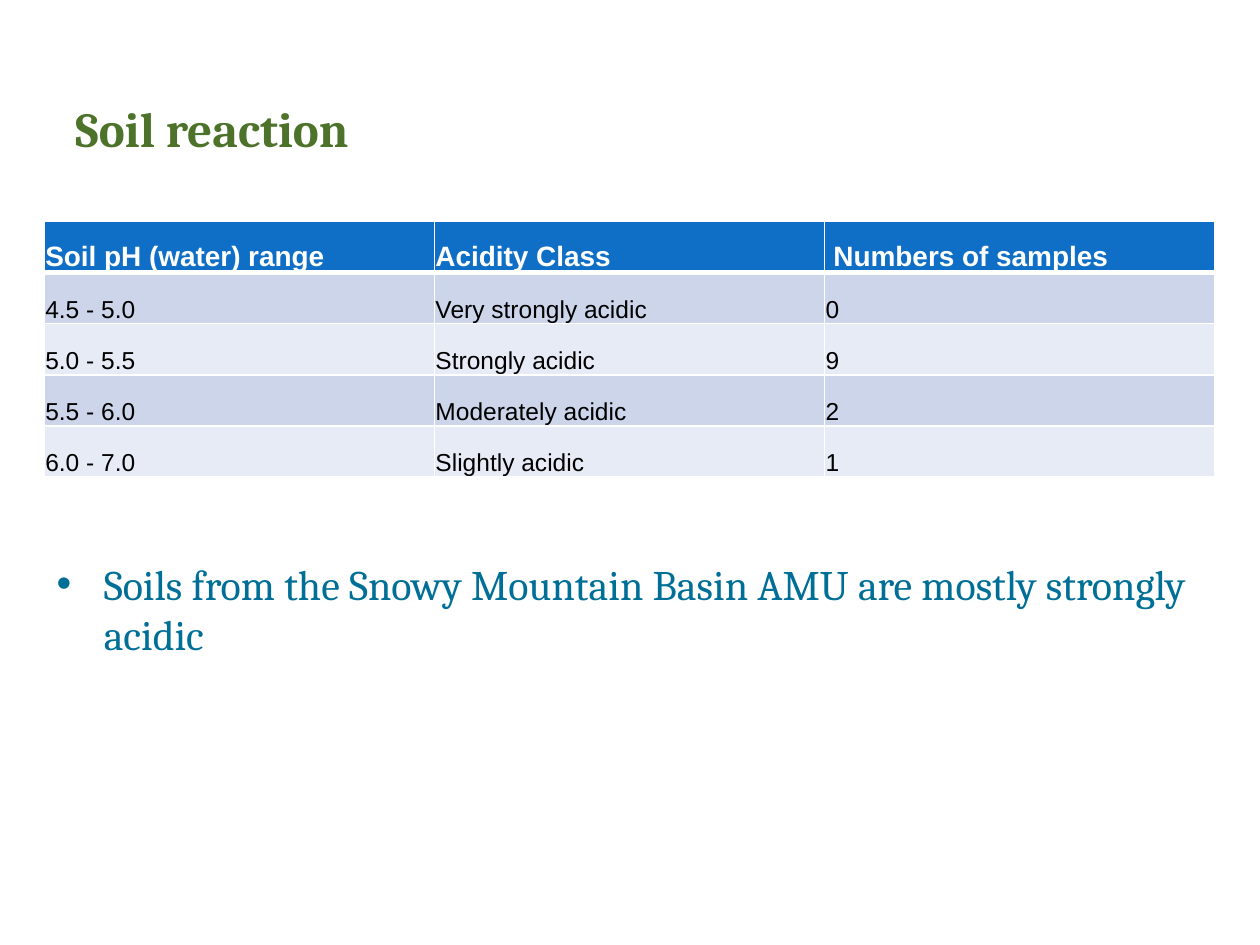
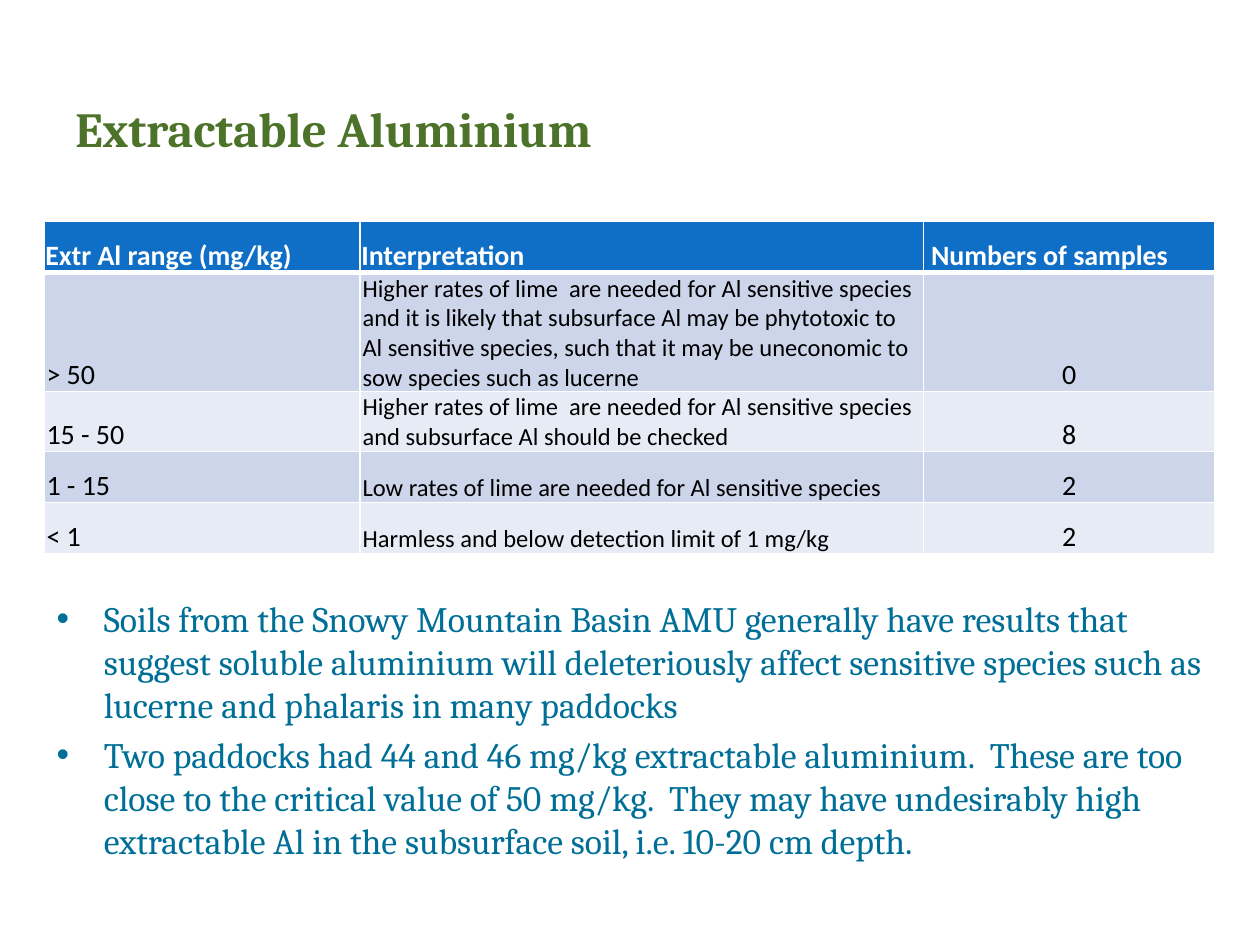
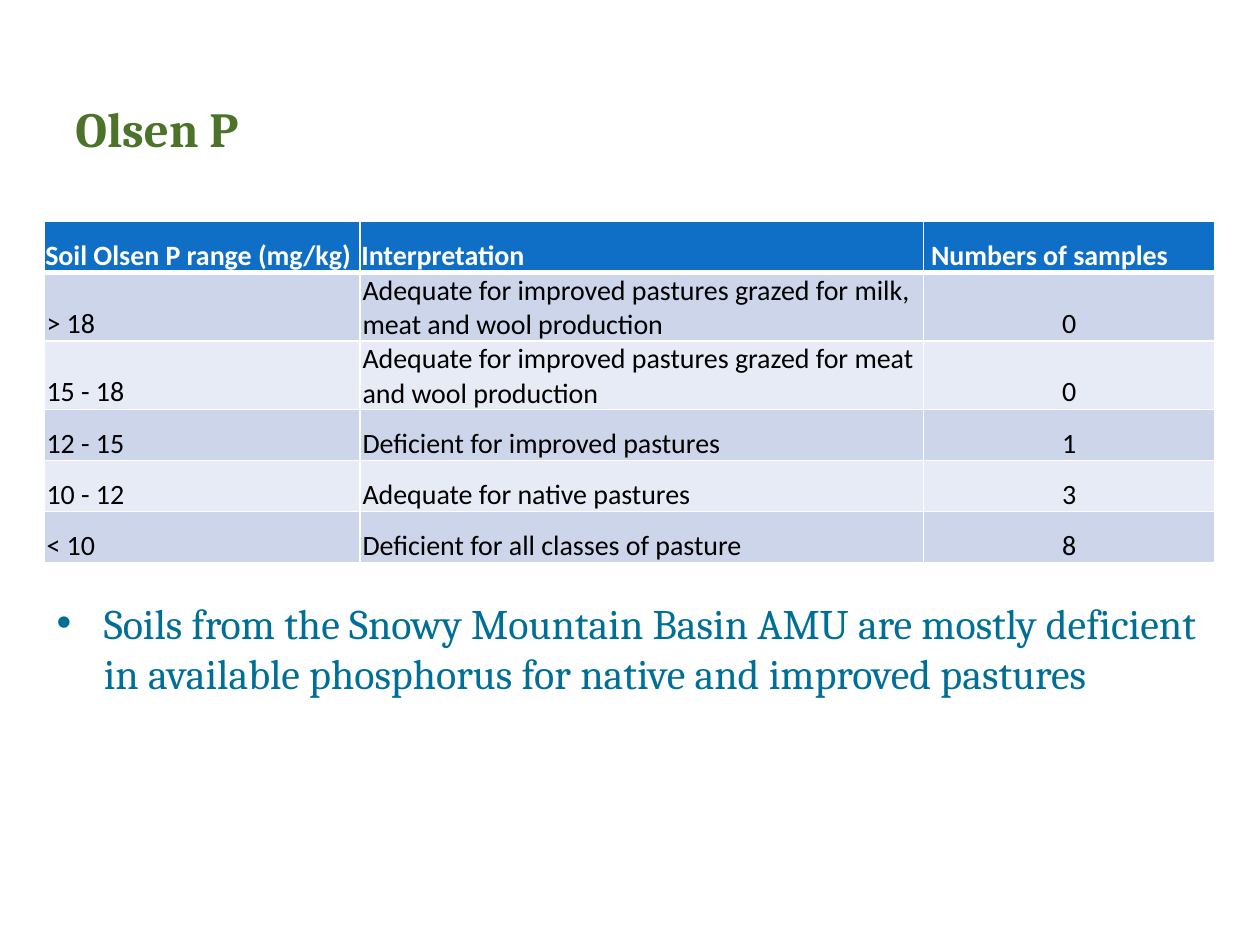
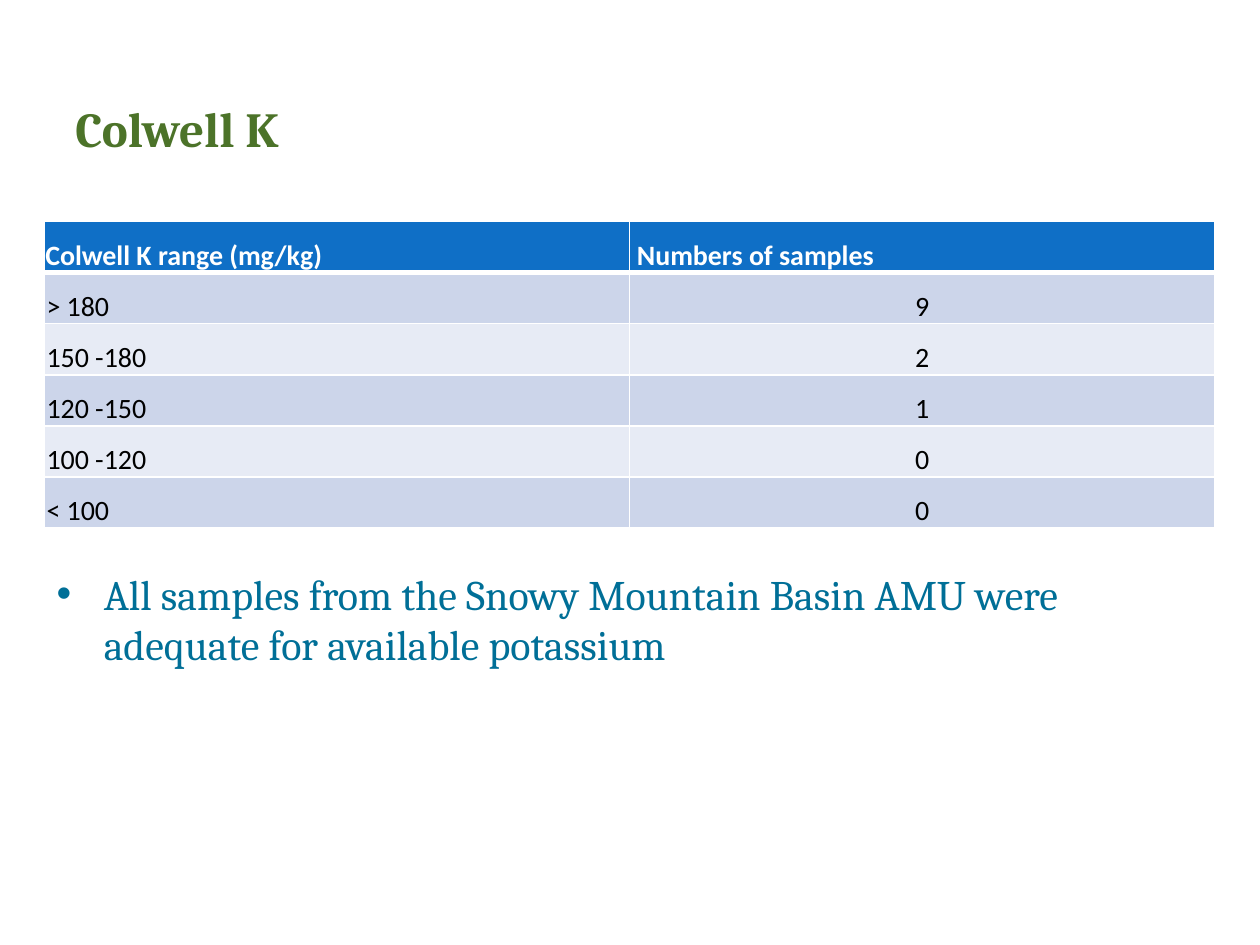
from dataclasses import dataclass

from lxml.etree import SubElement
from pptx import Presentation
from pptx.dml.color import RGBColor as Color
from pptx.enum.text import MSO_ANCHOR as Anchor, PP_ALIGN as Align
from pptx.oxml.ns import qn
from pptx.util import Pt


@dataclass(frozen=True)
class Theme:
    title_color: str = "4C7329"
    body_color: str = "006F97"
    header_fill: str = "0F6FC6"
    band_fills: tuple = ("E7EBF5", "CCD5EA")
    white: str = "FFFFFF"
    black: str = "000000"
    serif: str = "Cambria"
    title_size: float = 28
    header_size: float = 16
    left: float = 25.2
    table_top: float = 126.6
    row_height: float = 29.2
    bullet_indent: float = 27
    bullet_gap: float = 4
    thin: float = 1
    thick: float = 3


theme = Theme()

SAMPLES = " Numbers of samples"

pages = [
    {
        "title": "Soil reaction",
        "font": "Arial",
        "columns": [223, 223, 223],
        "sizes": [14, 14, 14],
        "samples_align": Align.LEFT,
        "margin": 0.7,
        "rows": [
            ["Soil pH (water) range", "Acidity Class", SAMPLES],
            ["4.5 - 5.0", "Very strongly acidic", "0"],
            ["5.0 - 5.5", "Strongly acidic", "9"],
            ["5.5 - 6.0", "Moderately acidic", "2"],
            ["6.0 - 7.0", "Slightly acidic", "1"],
        ],
        "body_area": (315.4, 663, 157.6),
        "body_size": 24,
        "bullets": ["Soils from the Snowy Mountain Basin AMU are mostly strongly acidic"],
    },
    {
        "title": "Extractable Aluminium",
        "font": "Calibri",
        "columns": [180.6, 322, 166.4],
        "sizes": [16, 14, 16],
        "samples_align": Align.CENTER,
        "margin": 1.4,
        "rows": [
            ["Extr Al range (mg/kg)", "Interpretation", SAMPLES],
            ["> 50", "Higher rates of lime  are needed for Al sensitive species and it is "
             "likely that subsurface Al may be phytotoxic to Al sensitive species, such that "
             "it may be uneconomic to sow species such as lucerne", "0"],
            ["15 - 50", "Higher rates of lime  are needed for Al sensitive species and "
             "subsurface Al should be checked", "8"],
            ["1 - 15", "Low rates of lime are needed for Al sensitive species", "2"],
            ["< 1", "Harmless and below detection limit of 1 mg/kg", "2"],
        ],
        "body_area": (337.7, 669, 134.6),
        "body_size": 20.4,
        "bullets": [
            "Soils from the Snowy Mountain Basin AMU generally have results that suggest "
            "soluble aluminium will deleteriously affect sensitive species such as lucerne "
            "and phalaris in many paddocks",
            "Two paddocks had 44 and 46 mg/kg extractable aluminium.  These are too close to "
            "the critical value of 50 mg/kg.  They may have undesirably high extractable Al "
            "in the subsurface soil, i.e. 10-20 cm depth.",
        ],
    },
    {
        "title": "Olsen P",
        "font": "Calibri",
        "columns": [180.6, 322, 166.4],
        "sizes": [16, 16, 16],
        "samples_align": Align.CENTER,
        "margin": 1.4,
        "rows": [
            ["Soil Olsen P range (mg/kg)", "Interpretation", SAMPLES],
            ["> 18", "Adequate for improved pastures grazed for milk, meat and wool "
             "production", "0"],
            ["15 - 18", "Adequate for improved pastures grazed for meat and wool "
             "production", "0"],
            ["12 - 15", "Deficient for improved pastures", "1"],
            ["10 - 12", "Adequate for native pastures", "3"],
            ["< 10", "Deficient for all classes of pasture", "8"],
        ],
        "body_area": (337.7, 669, 134.6),
        "body_size": 24,
        "bullets": ["Soils from the Snowy Mountain Basin AMU are mostly deficient in available "
                    "phosphorus for native and improved pastures"],
    },
    {
        "title": "Colwell K",
        "font": "Calibri",
        "columns": [334.5, 334.5],
        "sizes": [16, 16],
        "samples_align": Align.CENTER,
        "margin": 1.4,
        "rows": [
            ["Colwell K range (mg/kg)", SAMPLES],
            ["> 180", "9"],
            ["150 -180", "2"],
            ["120 -150", "1"],
            ["100 -120", "0"],
            ["< 100", "0"],
        ],
        "body_area": (321.1, 669, 151.9),
        "body_size": 24,
        "bullets": ["All samples from the Snowy Mountain Basin AMU were adequate for available "
                    "potassium"],
    },
]


def add_run(para, text, font, size, color, bold=False):
    span = para.add_run()
    span.text = text
    span.font.name = font
    span.font.size = Pt(size)
    span.font.bold = bold
    span.font.color.rgb = Color.from_string(color)


def add_borders(cell, top, bottom):
    properties = cell._tc.get_or_add_tcPr()
    widths = {"a:lnL": theme.thin, "a:lnR": theme.thin, "a:lnT": top, "a:lnB": bottom}
    for tag, width in widths.items():
        line = SubElement(properties, qn(tag), w=str(Pt(width)))
        fill = SubElement(line, qn("a:solidFill"))
        SubElement(fill, qn("a:srgbClr"), val=theme.white)


deck = Presentation()
deck.slide_width, deck.slide_height = Pt(720), Pt(540)

for content in pages:
    page = deck.slides.add_slide(deck.slide_layouts[6])

    title = page.shapes.add_textbox(Pt(36), Pt(34.6), Pt(648), Pt(77)).text_frame
    title.word_wrap = True
    title.vertical_anchor = Anchor.MIDDLE
    add_run(title.paragraphs[0], content["title"], theme.serif, theme.title_size,
            theme.title_color, True)

    rows, columns = content["rows"], content["columns"]
    table = page.shapes.add_table(
        len(rows), len(columns), Pt(theme.left), Pt(theme.table_top),
        Pt(sum(columns)), Pt(theme.row_height * len(rows))).table
    for column, width in zip(table.columns, columns):
        column.width = Pt(width)
    for row_index, texts in enumerate(rows):
        table.rows[row_index].height = Pt(theme.row_height)
        header = row_index == 0
        for column_index, text in enumerate(texts):
            cell = table.cell(row_index, column_index)
            add_borders(cell, theme.thick if row_index == 1 else theme.thin,
                        theme.thick if header else theme.thin)
            cell.fill.solid()
            cell.fill.fore_color.rgb = Color.from_string(
                theme.header_fill if header else theme.band_fills[row_index % 2])
            cell.vertical_anchor = Anchor.BOTTOM
            cell.margin_left = cell.margin_right = Pt(0.7 if header else content["margin"])
            cell.margin_top, cell.margin_bottom = Pt(0.7), Pt(0)
            para = cell.text_frame.paragraphs[0]
            if not header and column_index == len(columns) - 1:
                para.alignment = content["samples_align"]
            add_run(para, text, content["font"],
                    theme.header_size if header else content["sizes"][column_index],
                    theme.white if header else theme.black, header)

    top, width, height = content["body_area"]
    body = page.shapes.add_textbox(Pt(theme.left), Pt(top), Pt(width), Pt(height)).text_frame
    body.word_wrap = True
    for bullet_index, text in enumerate(content["bullets"]):
        para = body.add_paragraph() if bullet_index else body.paragraphs[0]
        properties = para._p.get_or_add_pPr()
        properties.set("marL", str(Pt(theme.bullet_indent)))
        properties.set("indent", str(-Pt(theme.bullet_indent)))
        SubElement(properties, qn("a:buFont"), typeface="Arial")
        SubElement(properties, qn("a:buChar"), char="•")
        if bullet_index:
            para.space_before = Pt(theme.bullet_gap)
        add_run(para, text, theme.serif, content["body_size"], theme.body_color)

deck.save("out.pptx")
